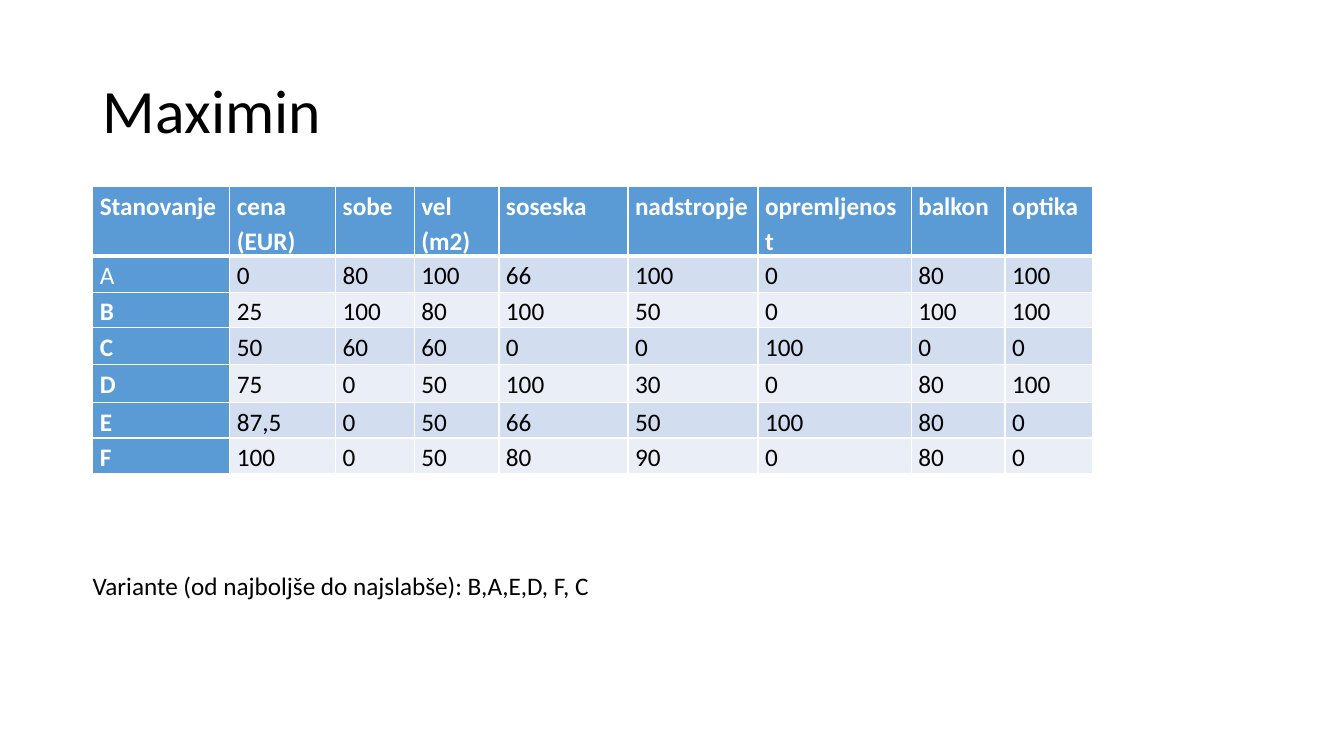
import pptx
import pptx.util
import pptx.dml.color
import pptx.enum.text
import pptx.oxml
import pptx.oxml.ns

HUES = {"ink": "000000", "paper": "FFFFFF", "head": "5B9BD5", "odd": "D2DEEF", "even": "EAEFF7"}
COLS = [10.2, 7.88, 5.85, 6.3, 9.6, 9.68, 11.4, 6.98, 6.53]
ROWS = [9.2, 4.8, 4.67, 4.87, 5.07, 4.67, 4.67]
FLATS = [
    ["Stanovanje", "cena (EUR)", "sobe", "vel (m2)", "soseska", "nadstropje", "opremljenost", "balkon", "optika"],
    ["A", "0", "80", "100", "66", "100", "0", "80", "100"],
    ["B", "25", "100", "80", "100", "50", "0", "100", "100"],
    ["C", "50", "60", "60", "0", "0", "100", "0", "0"],
    ["D", "75", "0", "50", "100", "30", "0", "80", "100"],
    ["E", "87,5", "0", "50", "66", "50", "100", "80", "0"],
    ["F", "100", "0", "50", "80", "90", "0", "80", "0"],
]


class Deck:
    """Hold the style and current slide, with lengths as percent of the slide."""

    def __init__(self):
        self.show = pptx.Presentation()
        self.show.slide_width = pptx.util.Inches(13.33)
        self.show.slide_height = pptx.util.Inches(7.5)
        self.slide = self.show.slides.add_slide(self.show.slide_layouts[5])

    def wide(self, share):
        return round(self.show.slide_width * share / 100)

    def high(self, share):
        return round(self.show.slide_height * share / 100)

    def area(self, x, y, w, h):
        return self.wide(x), self.high(y), self.wide(w), self.high(h)

    def hue(self, name):
        return pptx.dml.color.RGBColor.from_string(HUES[name])

    def label(self, frame, text, size=18, hue="ink", bold=False, space=1.0):
        frame.word_wrap = True
        frame.text = text
        para = frame.paragraphs[0]
        para.alignment = pptx.enum.text.PP_ALIGN.LEFT
        para.line_spacing = space
        para.font.name = "Calibri"
        para.font.size = pptx.util.Pt(size)
        para.font.bold = bold
        para.font.color.rgb = self.hue(hue)

    def title(self, text, *box):
        shape = self.slide.shapes.title
        shape.left, shape.top, shape.width, shape.height = self.area(*box)
        frame = shape.text_frame
        frame.auto_size = pptx.enum.text.MSO_AUTO_SIZE.NONE
        frame.vertical_anchor = pptx.enum.text.MSO_ANCHOR.MIDDLE
        self.label(frame, text, size=44, space=0.9)

    def note(self, text, *box):
        self.label(self.slide.shapes.add_textbox(*self.area(*box)).text_frame, text)

    def edge(self, cell, side, width):
        props = cell._tc.get_or_add_tcPr()
        props.append(pptx.oxml.parse_xml(
            f'<a:ln{side} {pptx.oxml.ns.nsdecls("a")} w="{pptx.util.Pt(width)}"><a:solidFill>'
            f'<a:srgbClr val="{HUES["paper"]}"/></a:solidFill></a:ln{side}>'))

    def cell(self, cell, text, row, col):
        for side in "LRTB":
            thick = (row, side) in [(0, "B"), (1, "T")]
            self.edge(cell, side, 3 if thick else 1)
        head = row == 0 or col == 0
        cell.fill.solid()
        cell.fill.fore_color.rgb = self.hue("head" if head else "odd" if row % 2 else "even")
        cell.margin_left = cell.margin_right = pptx.util.Inches(0.07)
        cell.margin_top = cell.margin_bottom = 0
        bold = head and (row, col) != (1, 0)
        self.label(cell.text_frame, text, hue="paper" if head else "ink", bold=bold, space=1.15)

    def table(self, data, cols, rows, x, y):
        box = self.area(x, y, sum(cols), sum(rows))
        grid = self.slide.shapes.add_table(len(rows), len(cols), *box).table
        for col, share in zip(grid.columns, cols):
            col.width = self.wide(share)
        for row, share in zip(grid.rows, rows):
            row.height = self.high(share)
        for r, line in enumerate(data):
            for c, text in enumerate(line):
                self.cell(grid.cell(r, c), text, r, c)


def main():
    deck = Deck()
    deck.title("Maximin", 6.9, 5.33, 86.25, 19.33)
    deck.note("Variante (od najboljše do najslabše): B,A,E,D, F, C", 6.15, 74.8, 40.28, 9.47)
    deck.table(FLATS, COLS, ROWS, 6.9, 24.67)
    deck.show.save("out.pptx")


if __name__ == "__main__":
    main()
